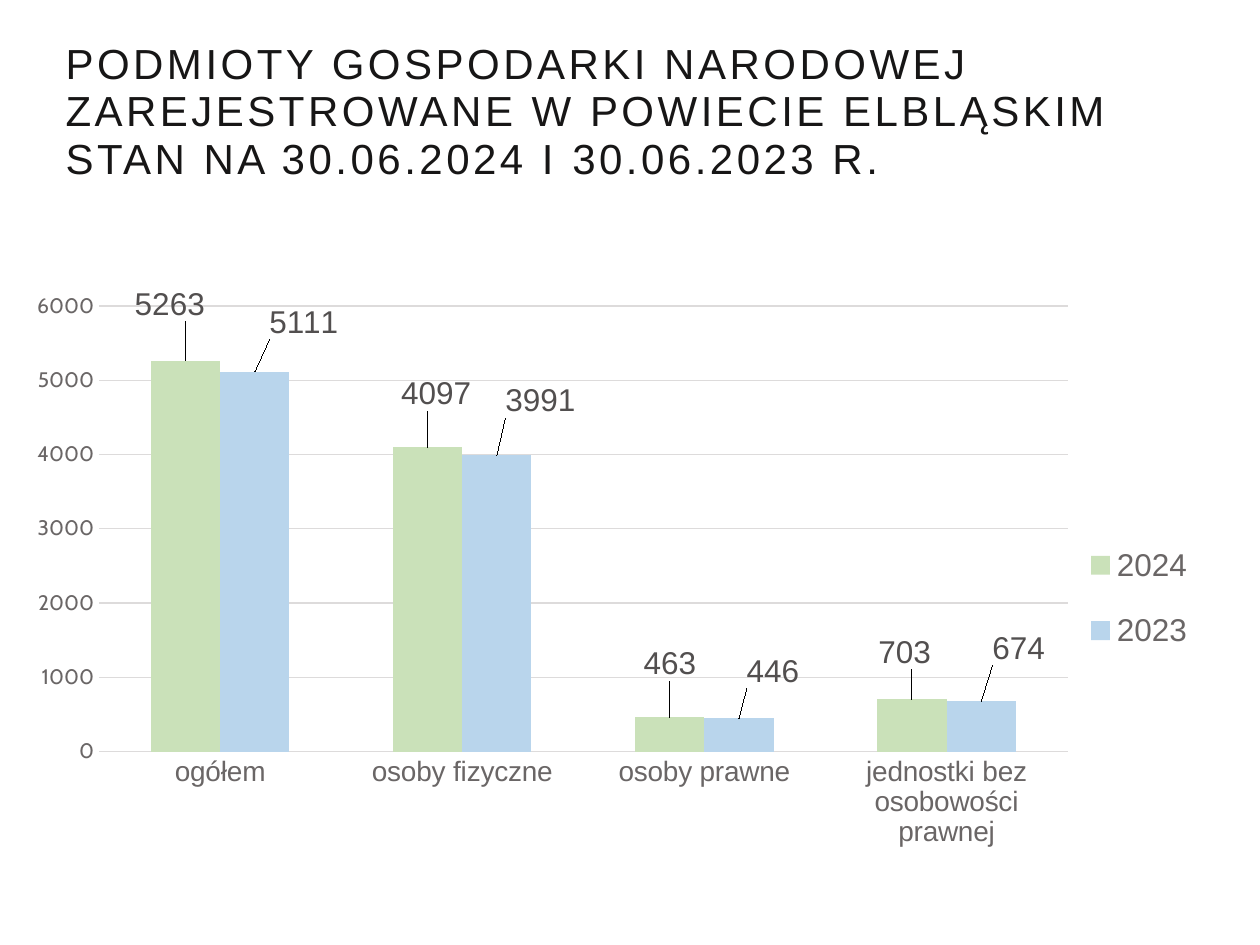
from lxml import etree
from pptx import Presentation
from pptx import util as u
from pptx.chart.data import CategoryChartData
from pptx.dml.color import RGBColor
from pptx.enum import chart as ch, text
from pptx.oxml.ns import qn

CATEGORIES = ["ogółem", "osoby fizyczne", "osoby prawne",
              "jednostki bez osobowości prawnej"]
# Name, colour, values, label offsets as fractions of the chart
SERIES = [
    ("2024", "CAE1B9", (5263, 4097, 463, 703),
     ((-0.013, -0.055), (0.007, -0.05), (0, -0.05), (-0.006, -0.04))),
    ("2023", "B9D5EC", (5111, 3991, 446, 674),
     ((0.041, -0.044), (0.036, -0.052), (0.028, -0.04), (0.031, -0.05))),
]


def rgb(value):
    return RGBColor.from_string(value)


def set_layout(parent, index, **values):
    """Give a chart part a manual layout at its place among the children."""
    for old in parent.findall(qn("c:layout")):
        parent.remove(old)
    layout = etree.Element(qn("c:layout"))
    manual = etree.SubElement(layout, qn("c:manualLayout"))
    for tag, value in values.items():
        etree.SubElement(manual, qn(f"c:{tag}")).set("val", str(value))
    parent.insert(index, layout)


class Deck:
    sans, rounded = "Arial", "Cabin"
    dark, grey, label, grid = "171616", "6A6666", "524F4F", "DDDBDB"

    def __init__(self, width, height):
        self.prs = Presentation()
        self.prs.slide_width, self.prs.slide_height = u.Pt(width), u.Pt(height)

    def add_slide(self):
        self.s = self.prs.slides.add_slide(self.prs.slide_layouts[5])

    def font(self, font, name, size, color):
        font.name, font.size, font.bold = name, u.Pt(size), False
        font.color.rgb = rgb(color)

    def title(self, lines, x, y, w, h):
        sp = self.s.shapes.title
        sp.left, sp.top, sp.width, sp.height = map(u.Pt, (x, y, w, h))
        tf = sp.text_frame
        tf.word_wrap, tf.auto_size = True, text.MSO_AUTO_SIZE.NONE
        tf.vertical_anchor = text.MSO_ANCHOR.MIDDLE
        p = tf.paragraphs[0]
        p.alignment, p.line_spacing = text.PP_ALIGN.LEFT, 0.94
        pPr = p._p.get_or_add_pPr()
        pPr.set("marL", str(u.Pt(21.6)))
        pPr.set("indent", "0")
        for i, line in enumerate(lines):
            if i:
                p.add_line_break()
            r = p.add_run()
            r.text = line
            self.font(r.font, self.sans, 24, self.dark)
            r.font._element.set("spc", "200")

    def column_chart(self, categories, series, x, y, w, h):
        data = CategoryChartData()
        data.categories = categories
        for name, _, values, _ in series:
            data.add_series(name, values)
        chart = self.s.shapes.add_chart(
            ch.XL_CHART_TYPE.COLUMN_CLUSTERED,
            *map(u.Pt, (x, y, w, h)), data).chart
        chart.has_title = False
        self.font(chart.font, self.rounded, 10, self.dark)

        # Plot
        plot = chart.plots[0]
        plot.gap_width, plot.overlap, plot.vary_by_categories = 150, 0, False
        set_layout(chart._chartSpace.chart.plotArea, 0, layoutTarget="inner",
                   xMode="edge", yMode="edge", x=0.061, y=0.067, w=0.8, h=0.722)
        for ser, (_, color, _, offsets) in zip(plot.series, series):
            self.style_series(ser, color, offsets)

        # Axes
        for axis, name, size in ((chart.category_axis, self.sans, 16),
                                 (chart.value_axis, self.rounded, 12)):
            axis.major_tick_mark = axis.minor_tick_mark = ch.XL_TICK_MARK.NONE
            axis.format.line.fill.background()
            self.font(axis.tick_labels.font, name, size, self.grey)
        axis = chart.value_axis
        axis.minimum_scale, axis.maximum_scale, axis.major_unit = 0, 6000, 1000
        axis.has_major_gridlines = True
        line = axis.major_gridlines.format.line
        line.color.rgb, line.width = rgb(self.grid), u.Pt(0.75)

        # Legend
        chart.has_legend = True
        legend = chart.legend
        legend.position = ch.XL_LEGEND_POSITION.BOTTOM
        legend.include_in_layout = False
        self.font(legend.font, self.sans, 18, self.grey)
        set_layout(legend._element, 1, xMode="edge", yMode="edge",
                   x=0.86, y=0.41, w=0.12, h=0.26)

    def style_series(self, ser, color, offsets):
        ser.invert_if_negative = False
        ser.format.fill.solid()
        ser.format.fill.fore_color.rgb = rgb(color)
        labels = ser.data_labels
        labels.show_value = True
        labels.position = ch.XL_LABEL_POSITION.OUTSIDE_END
        self.font(labels.font, self.sans, 18, self.label)
        for i in range(len(offsets)):
            point_label = ser.points[i].data_label
            point_label.position = ch.XL_LABEL_POSITION.OUTSIDE_END
            self.font(point_label.font, self.sans, 18, self.label)
        found = labels._element.findall(qn("c:dLbl"))
        for item, (dx, dy) in zip(found, offsets):
            set_layout(item, 1, x=dx, y=dy)


def main():
    deck = Deck(720, 540)
    deck.add_slide()
    deck.title(["PODMIOTY GOSPODARKI NARODOWEJ ZAREJESTROWANE "
                "W POWIECIE ELBLĄSKIM",
                "STAN NA 30.06.2024 I 30.06.2023 R."],
               8.64, 23.04, 708.48, 82.8)
    deck.column_chart(CATEGORIES, SERIES, 14.4, 151.2, 691.92, 352.8)
    deck.prs.save("out.pptx")


if __name__ == "__main__":
    main()
